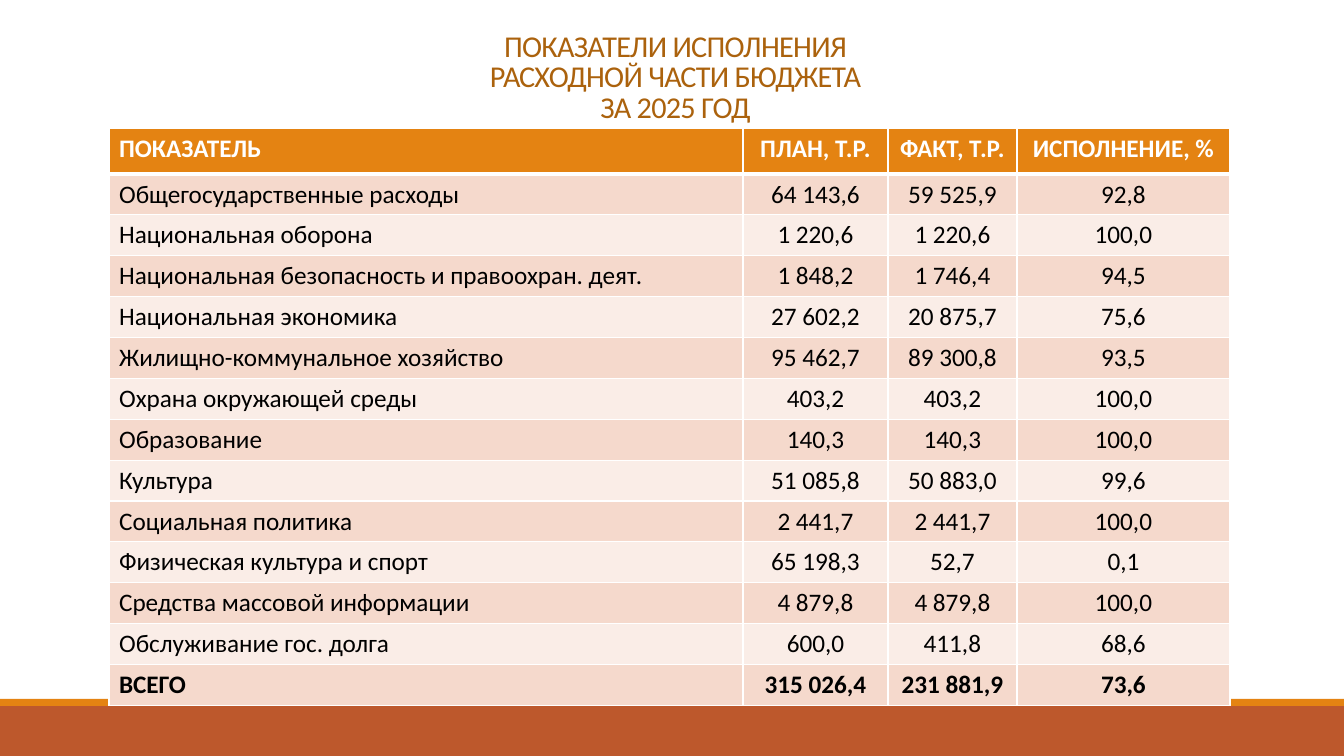
import pptx
import pptx.dml.color
import pptx.enum.shapes
import pptx.enum.text
import pptx.oxml
import pptx.oxml.ns
import pptx.util

RGBColor = pptx.dml.color.RGBColor
WHITE = RGBColor(0xFF, 0xFF, 0xFF)
BLACK = RGBColor(0x00, 0x00, 0x00)
ORANGE = RGBColor(0xE4, 0x83, 0x12)
RUST = RGBColor(0xBD, 0x58, 0x2C)
BROWN = RGBColor(0xAB, 0x62, 0x0D)
PEACH = RGBColor(0xF5, 0xD9, 0xCC)
CREAM = RGBColor(0xFA, 0xED, 0xE7)

EMU_PER_PX = 12192000 / 1344

TITLE = ["ПОКАЗАТЕЛИ ИСПОЛНЕНИЯ", "РАСХОДНОЙ ЧАСТИ БЮДЖЕТА", "ЗА 2025 ГОД"]
COLUMN_WIDTHS = [634, 145, 129, 213]
HEADER_HEIGHT = 46
ROW_HEIGHT = 40
BUDGET = [
    ["ПОКАЗАТЕЛЬ", "ПЛАН, Т.Р.", "ФАКТ, Т.Р.", "ИСПОЛНЕНИЕ, %"],
    ["Общегосударственные расходы", "64 143,6", "59 525,9", "92,8"],
    ["Национальная оборона", "1 220,6", "1 220,6", "100,0"],
    ["Национальная безопасность и правоохран. деят.", "1 848,2", "1 746,4", "94,5"],
    ["Национальная экономика", "27 602,2", "20 875,7", "75,6"],
    ["Жилищно-коммунальное хозяйство", "95 462,7", "89 300,8", "93,5"],
    ["Охрана окружающей среды", "403,2", "403,2", "100,0"],
    ["Образование", "140,3", "140,3", "100,0"],
    ["Культура", "51 085,8", "50 883,0", "99,6"],
    ["Социальная политика", "2 441,7", "2 441,7", "100,0"],
    ["Физическая культура и спорт", "65 198,3", "52,7", "0,1"],
    ["Средства массовой информации", "4 879,8", "4 879,8", "100,0"],
    ["Обслуживание гос. долга", "600,0", "411,8", "68,6"],
    ["ВСЕГО", "315 026,4", "231 881,9", "73,6"],
]


def px(length):
    return pptx.util.Emu(round(length * EMU_PER_PX))


class BudgetSlide:
    """Draws the elements of one slide in a shared style."""

    font_name = "Calibri"

    def __init__(self, page):
        self.page = page

    def add_span(self, para, text, size, color, bold=False):
        span = para.add_run()
        span.text = text
        span.font.name = self.font_name
        span.font.size = pptx.util.Pt(size)
        span.font.bold = bold
        span.font.color.rgb = color
        return span

    def add_band(self, left, top, width, height, color):
        band = self.page.shapes.add_shape(
            pptx.enum.shapes.MSO_SHAPE.RECTANGLE,
            px(left), px(top), px(width), px(height))
        band.shadow.inherit = False
        band.fill.solid()
        band.fill.fore_color.rgb = color
        band.line.fill.background()

    def add_title(self, left, top, width, height, lines):
        box = self.page.shapes.title
        box.left, box.top, box.width, box.height = map(px, (left, top, width, height))
        frame = box.text_frame
        frame.word_wrap = True
        frame.auto_size = pptx.enum.text.MSO_AUTO_SIZE.NONE
        frame.vertical_anchor = pptx.enum.text.MSO_ANCHOR.BOTTOM
        para = frame.paragraphs[0]
        para.alignment = pptx.enum.text.PP_ALIGN.CENTER
        para.line_spacing = 0.85
        for number, line in enumerate(lines):
            if number:
                para.add_line_break()
            span = self.add_span(para, line, 21.6, BROWN)
            span.font._element.set("spc", "-50")

    def add_borders(self, cell, bottom_width):
        properties = cell._tc.get_or_add_tcPr()
        widths = {"lnL": 1, "lnR": 1, "lnT": 1, "lnB": bottom_width}
        for position, (side, width) in enumerate(widths.items()):
            border = pptx.oxml.parse_xml(
                f'<a:{side} {pptx.oxml.ns.nsdecls("a")} w="{pptx.util.Pt(width)}">'
                f'<a:solidFill><a:srgbClr val="{WHITE}"/></a:solidFill></a:{side}>')
            properties.insert(position, border)

    def add_budget_table(self, left, top, rows):
        heights = [HEADER_HEIGHT] + [ROW_HEIGHT] * (len(rows) - 1)
        table = self.page.shapes.add_table(
            len(rows), len(COLUMN_WIDTHS), px(left), px(top),
            px(sum(COLUMN_WIDTHS)), px(sum(heights))).table
        for column, width in zip(table.columns, COLUMN_WIDTHS):
            column.width = px(width)
        for row, height in zip(table.rows, heights):
            row.height = px(height)
        for row_index, values in enumerate(rows):
            is_header = row_index == 0
            is_total = row_index == len(rows) - 1
            fill = ORANGE if is_header else PEACH if row_index % 2 else CREAM
            for column_index, value in enumerate(values):
                cell = table.cell(row_index, column_index)
                cell.fill.solid()
                cell.fill.fore_color.rgb = fill
                self.add_borders(cell, 3 if is_header else 1)
                para = cell.text_frame.paragraphs[0]
                if column_index:
                    para.alignment = pptx.enum.text.PP_ALIGN.CENTER
                self.add_span(para, value, 18, WHITE if is_header else BLACK,
                              is_header or is_total)


def main():
    deck = pptx.Presentation()
    deck.slide_width = px(1344)
    deck.slide_height = px(756)
    page = deck.slides.add_slide(deck.slide_layouts[5])
    slide = BudgetSlide(page)
    slide.add_band(0, 706, 1344, 50, RUST)
    slide.add_band(0, 699, 1344, 7, ORANGE)
    slide.add_title(121, 31, 1109, 99, TITLE)
    slide.add_budget_table(109, 128, BUDGET)
    deck.save("out.pptx")


if __name__ == "__main__":
    main()
